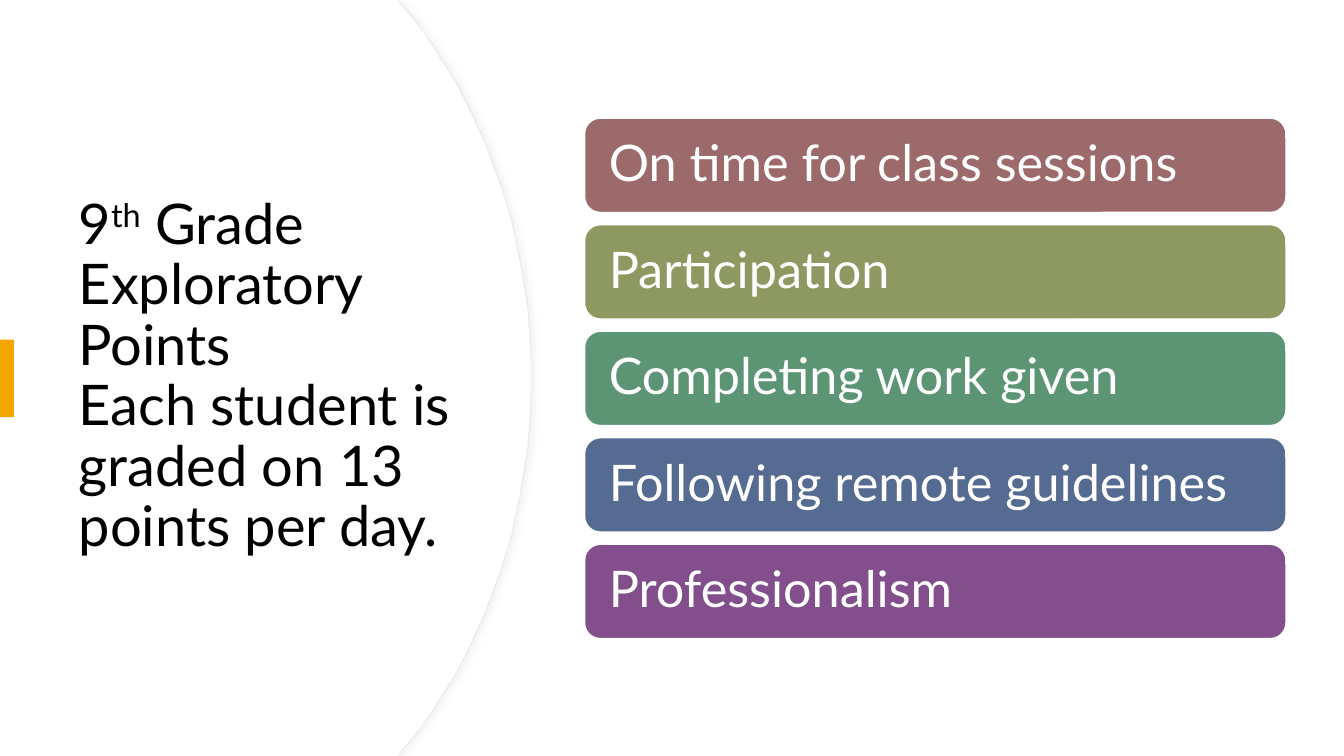
import pptx
import pptx.dml.color
import pptx.enum.shapes
import pptx.enum.text
import pptx.oxml
import pptx.oxml.ns
import pptx.util

Pt = pptx.util.Pt
SHAPE = pptx.enum.shapes.MSO_SHAPE
ANCHOR = pptx.enum.text.MSO_ANCHOR
ALIGN = pptx.enum.text.PP_ALIGN
WIDTH, HEIGHT = 960, 540
COLORS = {
    "white": "FFFFFF", "black": "000000", "outline": "E9E9E9",
    "shadow": "D9D9D9", "accent": "F5A700", "rose": "9C6A6A",
    "olive": "8E9962", "green": "5B9574", "blue": "556B91",
    "purple": "824F8C",
}
CRITERIA = [
    ("On time for class sessions", "rose"),
    ("Participation", "olive"),
    ("Completing work given", "green"),
    ("Following remote guidelines", "blue"),
    ("Professionalism", "purple"),
]


def rgb(name):
    return pptx.dml.color.RGBColor.from_string(COLORS[name])


def bezier(a, b, c, d, t):
    u = 1 - t
    return tuple(u**3 * i + 3 * u * u * t * j + 3 * u * t * t * k + t**3 * m
                 for i, j, k, m in zip(a, b, c, d))


class SlideMaker:
    """Holds the text style and the current slide."""

    def __init__(self, s, font):
        self.s, self.font = s, font

    def paint(self, sp, fill, line=None, width=1):
        sp.shadow.inherit = False
        sp.fill.solid()
        sp.fill.fore_color.rgb = rgb(fill)
        if line:
            sp.line.color.rgb = rgb(line)
            sp.line.width = Pt(width)
        else:
            sp.line.fill.background()
        return sp

    def frame(self, tf, inset_x, inset_y):
        values = {
            "word_wrap": True, "auto_size": pptx.enum.text.MSO_AUTO_SIZE.NONE,
            "vertical_anchor": ANCHOR.MIDDLE,
            "margin_left": Pt(inset_x), "margin_right": Pt(inset_x),
            "margin_top": Pt(inset_y), "margin_bottom": Pt(inset_y),
        }
        for key, value in values.items():
            setattr(tf, key, value)
        p = tf.paragraphs[0]
        p.alignment, p.line_spacing = ALIGN.LEFT, 0.9
        return p

    def run(self, p, text, size, color):
        r = p.add_run()
        r.text = text
        for key, value in {"name": self.font, "size": Pt(size)}.items():
            setattr(r.font, key, value)
        r.font.color.rgb = rgb(color)
        return r

    def box(self, kind, x, y, w, h, fill, line=None):
        sp = self.s.shapes.add_shape(kind, Pt(x), Pt(y), Pt(w), Pt(h))
        return self.paint(sp, fill, line)

    def bar(self, text, y, fill):
        sp = self.box(SHAPE.ROUNDED_RECTANGLE, 417.6, y, 501, 67.4, fill, "white")
        self.run(self.frame(sp.text_frame, 14, 11), text, 36, "white")

    def panel(self, right, line=None):
        arc = [bezier((right - 90.7, 5.8), (right - 34.5, 73.4),
                      (right, 167), (right, HEIGHT / 2), i / 24)
               for i in range(25)]
        upper = [(283.7, 0)] + arc
        lower = [(x, HEIGHT - y) for x, y in reversed(upper[:-1])]
        fb = self.s.shapes.build_freeform(0, 0, scale=float(Pt(1)))
        fb.add_line_segments(upper + lower + [(0, HEIGHT)])
        return self.paint(fb.convert_to_shape(), "white", line, 0.75)

    def cast_shadow(self, sp):
        effects = sp.element.spPr.find(pptx.oxml.ns.qn("a:effectLst"))
        effects.append(pptx.oxml.parse_xml(
            f'<a:outerShdw {pptx.oxml.ns.nsdecls("a")} blurRad="{Pt(4)}" '
            f'dist="{Pt(3)}" dir="0"><a:srgbClr val="{COLORS["shadow"]}">'
            '<a:alpha val="30000"/></a:srgbClr></a:outerShdw>'))

    def title(self, x, y, w, h):
        sp = self.s.shapes.title
        box = {"left": x, "top": y, "width": w, "height": h}
        for key, value in box.items():
            setattr(sp, key, Pt(value))
        sp.element.getparent().append(sp.element)
        p = self.frame(sp.text_frame, 7.2, 3.6)
        self.run(p, "9", 40, "black")
        r = self.run(p, "th", 40, "black")
        r.font._element.set("baseline", "30000")
        self.run(p, " Grade Exploratory Points", 40, "black")
        p.add_line_break()
        self.run(p, "Each student is graded on 13 points per day.", 40, "black")


def main():
    prs = pptx.Presentation()
    prs.slide_width, prs.slide_height = Pt(WIDTH), Pt(HEIGHT)
    maker = SlideMaker(prs.slides.add_slide(prs.slide_layouts[5]), "Lato")
    maker.box(SHAPE.RECTANGLE, 0, 0, WIDTH, HEIGHT, "white")
    maker.cast_shadow(maker.panel(379.4, "outline"))
    maker.panel(378.7)
    maker.title(49, 91.4, 283.7, 356.4)
    maker.box(SHAPE.RECTANGLE, 0, 242.6, 10, 55.4, "accent")
    for i, (text, fill) in enumerate(CRITERIA):
        maker.bar(text, 84.4 + i * 76.1, fill)
    prs.save("out.pptx")


if __name__ == "__main__":
    main()
